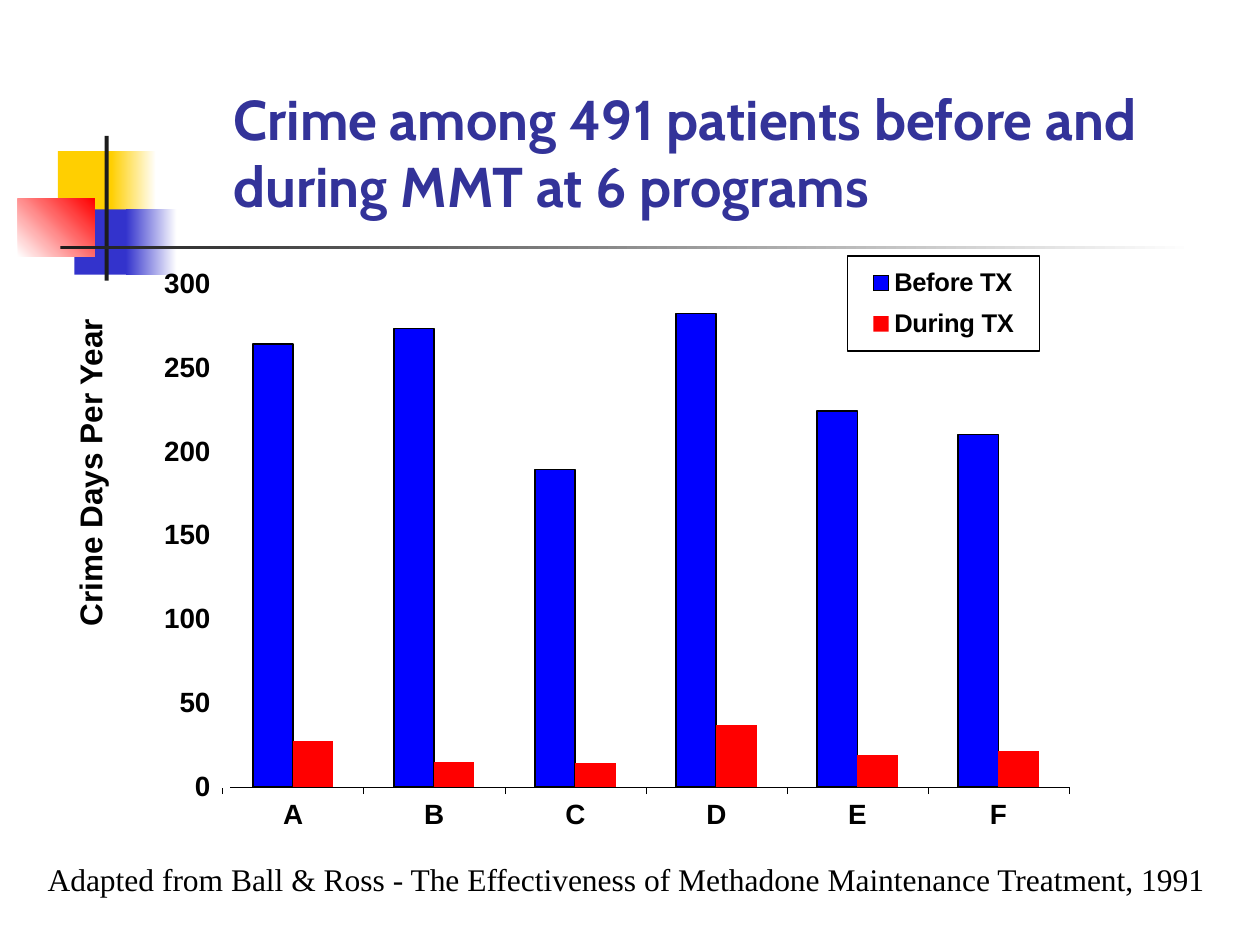
from lxml import etree
from pptx import Presentation
from pptx.chart.data import CategoryChartData
from pptx.dml.color import RGBColor
from pptx.enum.chart import XL_CHART_TYPE, XL_LEGEND_POSITION, XL_TICK_MARK
from pptx.enum.shapes import MSO_SHAPE
from pptx.enum.text import MSO_ANCHOR, PP_ALIGN
from pptx.oxml.ns import qn
from pptx.util import Cm, Pt

RECTANGLE = MSO_SHAPE.RECTANGLE
COLUMNS = XL_CHART_TYPE.COLUMN_CLUSTERED
LEGEND_RIGHT = XL_LEGEND_POSITION.RIGHT
TICK_OUTSIDE = XL_TICK_MARK.OUTSIDE
TICK_CROSS = XL_TICK_MARK.CROSS
MIDDLE = MSO_ANCHOR.MIDDLE
LEFT, CENTER = PP_ALIGN.LEFT, PP_ALIGN.CENTER

COLORS = {
    "yellow": "FFCF01", "indigo": "3333CC", "red": "FF0000", "blue": "0000FF",
    "charcoal": "1C1C1C", "title": "333399", "black": "000000", "white": "FFFFFF",
}

# left, top, width, height in cm, then start colour, end colour and angle
ORNAMENTS = [
    (1.17, 3.05, 1.22, 1.32, "yellow", None, 0),
    (2.24, 3.05, 0.91, 1.32, "yellow", "white", 0),
    (1.5, 4.22, 1.17, 1.32, "indigo", None, 0),
    (2.54, 4.22, 1.02, 1.32, "indigo", "white", 0),
    (0.36, 4.01, 1.55, 1.17, "white", "red", 45),
    (2.11, 2.74, 0.08, 2.92, "charcoal", None, 0),
    (1.22, 4.95, 22.86, 0.08, "charcoal", "white", 0),
]

PROGRAMS = ["A", "B", "C", "D", "E", "F"]
CRIME_DAYS = {
    "Before TX": [264, 273, 189, 282, 224, 210],
    "During TX": [27, 15, 14, 37, 19, 21],
}


def color(name):
    return RGBColor.from_string(COLORS[name])


def set_font(font, name, size, color_name="black", bold=False):
    font.name = name
    font.size = Pt(size)
    font.bold = bold
    font.color.rgb = color(color_name)


def set_line(line, color_name, width):
    line.color.rgb = color(color_name)
    line.width = Pt(width)


def add_run(text_frame, text, alignment, *font):
    paragraph = text_frame.paragraphs[0]
    paragraph.alignment = alignment
    run = paragraph.add_run()
    run.text = text
    set_font(run.font, *font)


def add_ornament(slide, left, top, width, height, start, end, angle):
    shape = slide.shapes.add_shape(RECTANGLE, Cm(left), Cm(top), Cm(width), Cm(height))
    shape.shadow.inherit = False
    shape.line.fill.background()
    if end is None:
        shape.fill.solid()
        shape.fill.fore_color.rgb = color(start)
        return
    shape.fill.gradient()
    shape.fill.gradient_angle = angle
    for stop, name in zip(shape.fill.gradient_stops, (start, end)):
        stop.color.rgb = color(name)


def format_title(slide, text):
    title = slide.shapes.title
    title.left, title.top, title.width, title.height = Cm(4.45), Cm(1.27), Cm(20.32), Cm(3.56)
    title.text_frame.vertical_anchor = MIDDLE
    title.text_frame.word_wrap = True
    add_run(title.text_frame, text, LEFT, "Cabin", 32, "title", True)


def add_label(slide, text, left, top, width, alignment, *font, rotation=0):
    box = slide.shapes.add_textbox(Cm(left), Cm(top), Cm(width), Cm(1.02))
    box.rotation = rotation
    box.text_frame.word_wrap = True
    add_run(box.text_frame, text, alignment, *font)


def set_layout(element, x, y, width, height, inner=False):
    """Fix the place of a plot area or legend as fractions of the chart."""
    layout = element.find(qn("c:layout"))
    if layout is None:
        layout = etree.Element(qn("c:layout"))
        position = 1 if element.tag == qn("c:legend") else 0
        element.insert(position, layout)
    for child in list(layout):
        layout.remove(child)
    manual = etree.SubElement(layout, qn("c:manualLayout"))
    settings = [("layoutTarget", "inner")] if inner else []
    settings += [("xMode", "edge"), ("yMode", "edge"),
                 ("x", x), ("y", y), ("w", width), ("h", height)]
    for name, value in settings:
        etree.SubElement(manual, qn("c:" + name)).set("val", str(value))


def format_legend(chart):
    chart.has_legend = True
    legend = chart.legend
    legend.position = LEGEND_RIGHT
    legend.include_in_layout = False
    set_font(legend.font, "Arial", 14.6, "black", True)
    set_layout(legend._element, 0.635, 0.022, 0.17, 0.149)
    properties = etree.Element(qn("c:spPr"))
    fill = etree.SubElement(properties, qn("a:solidFill"))
    etree.SubElement(fill, qn("a:srgbClr")).set("val", COLORS["white"])
    line = etree.SubElement(properties, qn("a:ln"), w=str(Pt(0.88)))
    line_fill = etree.SubElement(line, qn("a:solidFill"))
    etree.SubElement(line_fill, qn("a:srgbClr")).set("val", COLORS["black"])
    legend._element.find(qn("c:txPr")).addprevious(properties)


def format_axis(axis, line_color, line_width, tick_mark):
    set_font(axis.tick_labels.font, "Arial", 15.9, "black", True)
    set_line(axis.format.line, line_color, line_width)
    axis.major_tick_mark = tick_mark


def add_crime_chart(slide):
    data = CategoryChartData()
    data.categories = PROGRAMS
    for name, values in CRIME_DAYS.items():
        data.add_series(name, values)
    frame = slide.shapes.add_chart(COLUMNS, Cm(2.62), Cm(4.88), Cm(22.78), Cm(12.83), data)
    chart = frame.chart
    chart.has_title = False
    set_font(chart.font, "Cabin", 14.8, "black", True)

    plot = chart.plots[0]
    plot.gap_width = 150
    plot.overlap = 0
    plot.vary_by_categories = False
    for series, name in zip(plot.series, ("blue", "red")):
        series.format.fill.solid()
        series.format.fill.fore_color.rgb = color(name)
    before, during = plot.series
    set_line(before.format.line, "black", 0.88)
    during.format.line.fill.background()

    format_axis(chart.category_axis, "black", 0.22, TICK_OUTSIDE)
    value_axis = chart.value_axis
    format_axis(value_axis, "white", 0.88, TICK_CROSS)
    value_axis.minimum_scale, value_axis.maximum_scale = 0, 300
    value_axis.major_unit = 50
    set_line(value_axis.major_gridlines.format.line, "white", 0.88)

    plot_area = chart._chartSpace.chart.plotArea
    set_layout(plot_area, 0.082, 0.065, 0.749, 0.791, inner=True)
    format_legend(chart)


def main():
    presentation = Presentation()
    presentation.slide_width, presentation.slide_height = Cm(25.4), Cm(19.05)
    slide = presentation.slides.add_slide(presentation.slide_layouts[5])
    for ornament in ORNAMENTS:
        add_ornament(slide, *ornament)
    format_title(slide, "Crime among 491 patients before and during MMT at 6 programs")
    add_crime_chart(slide)
    add_label(slide,
              "Adapted from Ball & Ross - The Effectiveness of Methadone Maintenance Treatment, 1991",
              0.71, 17.22, 24.69, LEFT, "Times New Roman", 18)
    add_label(slide, "Crime Days Per Year", -4.98, 9.02, 13.59, CENTER,
              "Arial", 18, "black", True, rotation=270)
    presentation.save("out.pptx")


if __name__ == "__main__":
    main()
